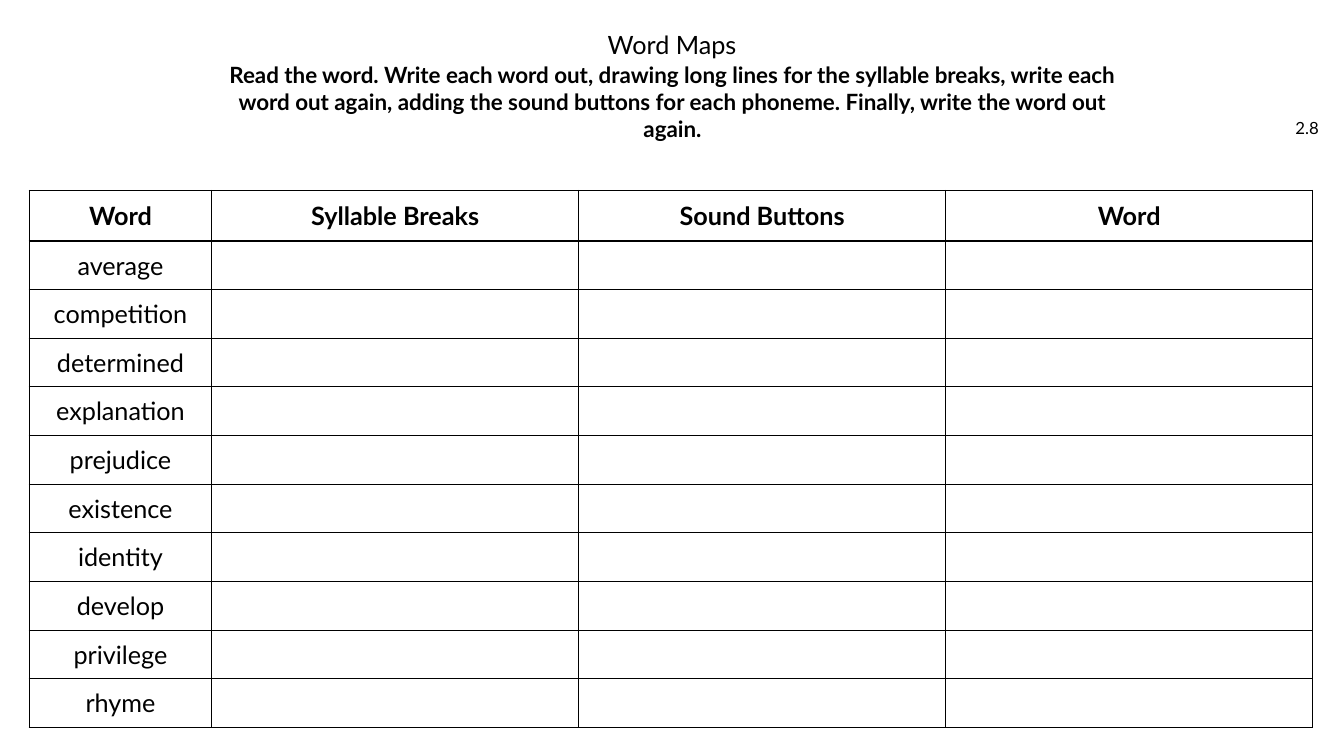
from lxml import etree
from pptx import Presentation
from pptx.dml.color import RGBColor
from pptx.enum import text
from pptx.oxml import ns
from pptx.util import Inches, Pt

BLACK = RGBColor(0x00, 0x00, 0x00)
WHITE = RGBColor(0xFF, 0xFF, 0xFF)
FONT = "Lato"
CENTER = text.PP_ALIGN.CENTER
RIGHT = text.PP_ALIGN.RIGHT
MIDDLE = text.MSO_ANCHOR.MIDDLE

TITLE = "Word Maps"
INSTRUCTIONS = (
    "Read the word. Write each word out, drawing long lines for the syllable "
    "breaks, write each word out again, adding the sound buttons for each "
    "phoneme. Finally, write the word out again."
)
HEADINGS = ["Word", "Syllable Breaks", "Sound Buttons", "Word"]
WORDS = [
    "average", "competition", "determined", "explanation", "prejudice",
    "existence", "identity", "develop", "privilege", "rhyme",
]
COLUMN_WIDTHS = [1.81, 3.64, 3.64, 3.64]
HEADING_HEIGHT = 0.5
TABLE_HEIGHT = 5.33


def write(frame, wording, size, bold=False, align=CENTER):
    para = frame.paragraphs[0]
    para.alignment = align
    span = para.add_run()
    span.text = wording
    span.font.name = FONT
    span.font.size = Pt(size)
    span.font.bold = bold
    span.font.color.rgb = BLACK
    return para


def set_title(slide):
    title = slide.shapes.title
    title.left, title.top = Inches(3.82), Inches(0.28)
    title.width, title.height = Inches(5.69), Inches(0.35)
    frame = title.text_frame
    frame.word_wrap = True
    frame.auto_size = text.MSO_AUTO_SIZE.NONE
    frame.vertical_anchor = MIDDLE
    frame.margin_top = frame.margin_bottom = 0
    para = write(frame, TITLE, 18)
    para.line_spacing = 0.9
    para.space_before = Pt(0)


def add_label(slide, wording, left, top, width, height, size, bold, align):
    box = slide.shapes.add_textbox(
        Inches(left), Inches(top), Inches(width), Inches(height))
    box.text_frame.word_wrap = True
    box.text_frame.vertical_anchor = MIDDLE
    write(box.text_frame, wording, size, bold, align)


def add_borders(cell):
    properties = cell._tc.get_or_add_tcPr()
    for index, side in enumerate(("lnL", "lnR", "lnT", "lnB")):
        line = etree.Element(ns.qn(f"a:{side}"), w=str(Pt(1)))
        fill = etree.SubElement(line, ns.qn("a:solidFill"))
        etree.SubElement(fill, ns.qn("a:srgbClr"), val=str(BLACK))
        properties.insert(index, line)


def format_cell(cell, wording, bold):
    cell.fill.solid()
    cell.fill.fore_color.rgb = WHITE
    cell.vertical_anchor = MIDDLE
    cell.margin_left = cell.margin_right = Inches(0.11)
    cell.margin_top = cell.margin_bottom = Inches(0.05)
    add_borders(cell)
    if wording:
        write(cell.text_frame, wording, 18, bold)


def add_word_table(slide):
    rows = [HEADINGS] + [[word, "", "", ""] for word in WORDS]
    table = slide.shapes.add_table(
        len(rows), len(HEADINGS), Inches(0.29), Inches(1.89),
        Inches(sum(COLUMN_WIDTHS)), Inches(TABLE_HEIGHT)).table
    table.first_row = False
    table.horz_banding = False
    for column, width in zip(table.columns, COLUMN_WIDTHS):
        column.width = Inches(width)
    word_height = (TABLE_HEIGHT - HEADING_HEIGHT) / len(WORDS)
    for row_index, wordings in enumerate(rows):
        heading = row_index == 0
        table.rows[row_index].height = Inches(
            HEADING_HEIGHT if heading else word_height)
        for column_index, wording in enumerate(wordings):
            format_cell(table.cell(row_index, column_index), wording, heading)


def main():
    deck = Presentation()
    deck.slide_width, deck.slide_height = Inches(13.33), Inches(7.5)
    slide = deck.slides.add_slide(deck.slide_layouts.get_by_name("Title Only"))
    set_title(slide)
    add_label(slide, INSTRUCTIONS, 1.97, 0.6, 9.4, 0.82, 16, True, CENTER)
    add_label(slide, "2.8", 12.55, 1.07, 0.63, 0.4, 12, False, RIGHT)
    add_word_table(slide)
    deck.save("out.pptx")


if __name__ == "__main__":
    main()
